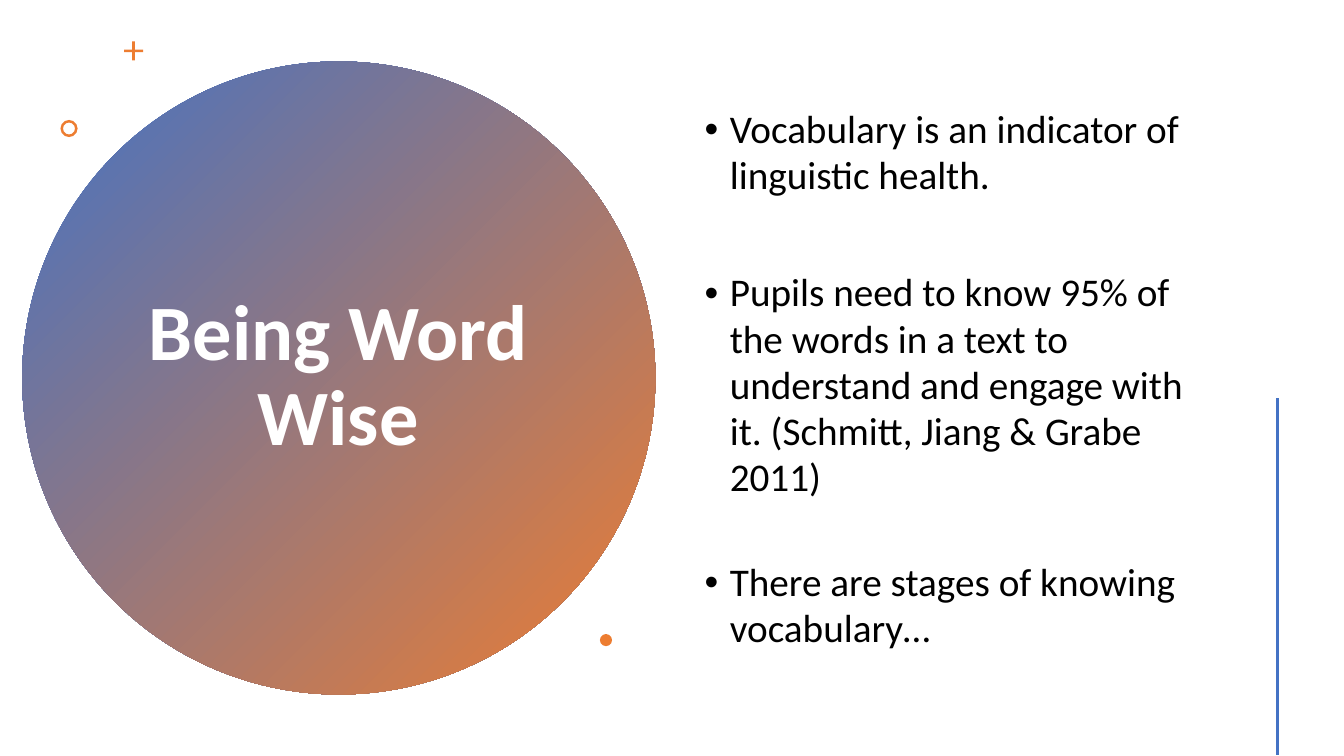
from lxml import etree
from pptx import Presentation
from pptx.dml.color import RGBColor
from pptx.enum.shapes import MSO_CONNECTOR, MSO_SHAPE
from pptx.enum.text import MSO_ANCHOR, PP_ALIGN
from pptx.oxml.ns import qn
from pptx.util import Inches, Pt

BLUE = RGBColor(0x44, 0x72, 0xC4)
ORANGE = RGBColor(0xED, 0x7D, 0x31)
WHITE = RGBColor(0xFF, 0xFF, 0xFF)
BLACK = RGBColor(0x00, 0x00, 0x00)

presentation = Presentation()
presentation.slide_width = Inches(13.33)
presentation.slide_height = Inches(7.5)
slide = presentation.slides.add_slide(presentation.slide_layouts[6])


def add_ornament(preset, left, top, size):
    """Add a square, borderless orange shape."""
    shape = slide.shapes.add_shape(
        preset, Inches(left), Inches(top), Inches(size), Inches(size))
    shape.shadow.inherit = False
    shape.line.fill.background()
    shape.fill.solid()
    shape.fill.fore_color.rgb = ORANGE
    return shape


def add_text(left, top, width, height, lines, size, color, bold=False):
    """Add a vertically centred text box with one paragraph per line."""
    frame = slide.shapes.add_textbox(
        Inches(left), Inches(top), Inches(width), Inches(height)).text_frame
    frame.word_wrap = True
    frame.vertical_anchor = MSO_ANCHOR.MIDDLE
    frame.text = "\n".join(lines)
    for paragraph in frame.paragraphs:
        font = paragraph.runs[0].font
        font.name = "Calibri"
        font.size = Pt(size)
        font.bold = bold
        font.color.rgb = color
    return frame.paragraphs


circle = add_ornament(MSO_SHAPE.OVAL, 0.22, 0.61, 6.28)
circle.fill.gradient()
circle.fill.gradient_angle = 315
for stop, color in zip(circle.fill.gradient_stops, (BLUE, ORANGE)):
    stop.color.rgb = color

title = add_text(1.36, 1.41, 3.99, 4.67, ["Being Word Wise"], 56, WHITE, bold=True)[0]
title.alignment = PP_ALIGN.CENTER
title.line_spacing = 0.9

plus = add_ornament(MSO_SHAPE.CROSS, 1.23, 0.41, 0.19)
plus.adjustments[0] = 0.43
ring = add_ornament(MSO_SHAPE.DONUT, 0.6, 1.19, 0.17)
ring.adjustments[0] = 0.15
add_ornament(MSO_SHAPE.OVAL, 5.95, 6.29, 0.12)

points = [
    "Vocabulary is an indicator of linguistic health.",
    "Pupils need to know 95% of the words in a text to understand and engage "
    "with it. (Schmitt, Jiang & Grabe 2011)",
    "There are stages of knowing vocabulary…",
]
gaps_before = [5.6, 51, 42]
bullets = add_text(6.89, 0.57, 5.22, 6.38, points, 28, BLACK)
for paragraph, gap in zip(bullets, gaps_before):
    paragraph.space_before = Pt(gap)
    paragraph.line_spacing = 0.98
    properties = paragraph._p.get_or_add_pPr()
    properties.set("marL", str(Inches(0.25)))
    properties.set("indent", str(-Inches(0.25)))
    etree.SubElement(properties, qn("a:buFont")).set("typeface", "Arial")
    etree.SubElement(properties, qn("a:buChar")).set("char", "•")

side_line = slide.shapes.add_connector(
    MSO_CONNECTOR.STRAIGHT, Inches(12.67), Inches(3.95), Inches(12.67), Inches(7.49))
side_line.line.color.rgb = BLUE
side_line.line.width = Pt(2)
etree.SubElement(side_line._element.spPr, qn("a:effectLst"))

presentation.save("out.pptx")
